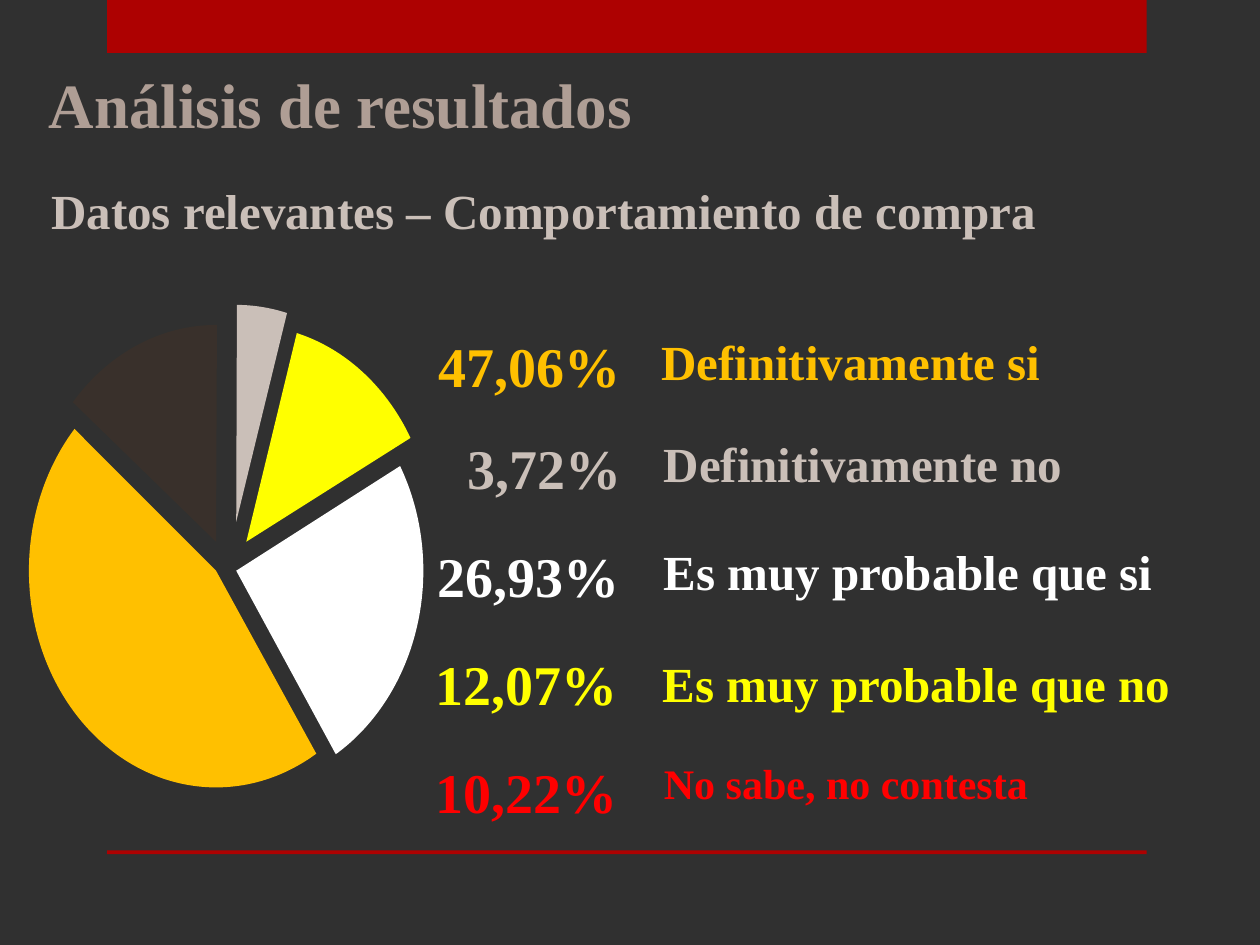
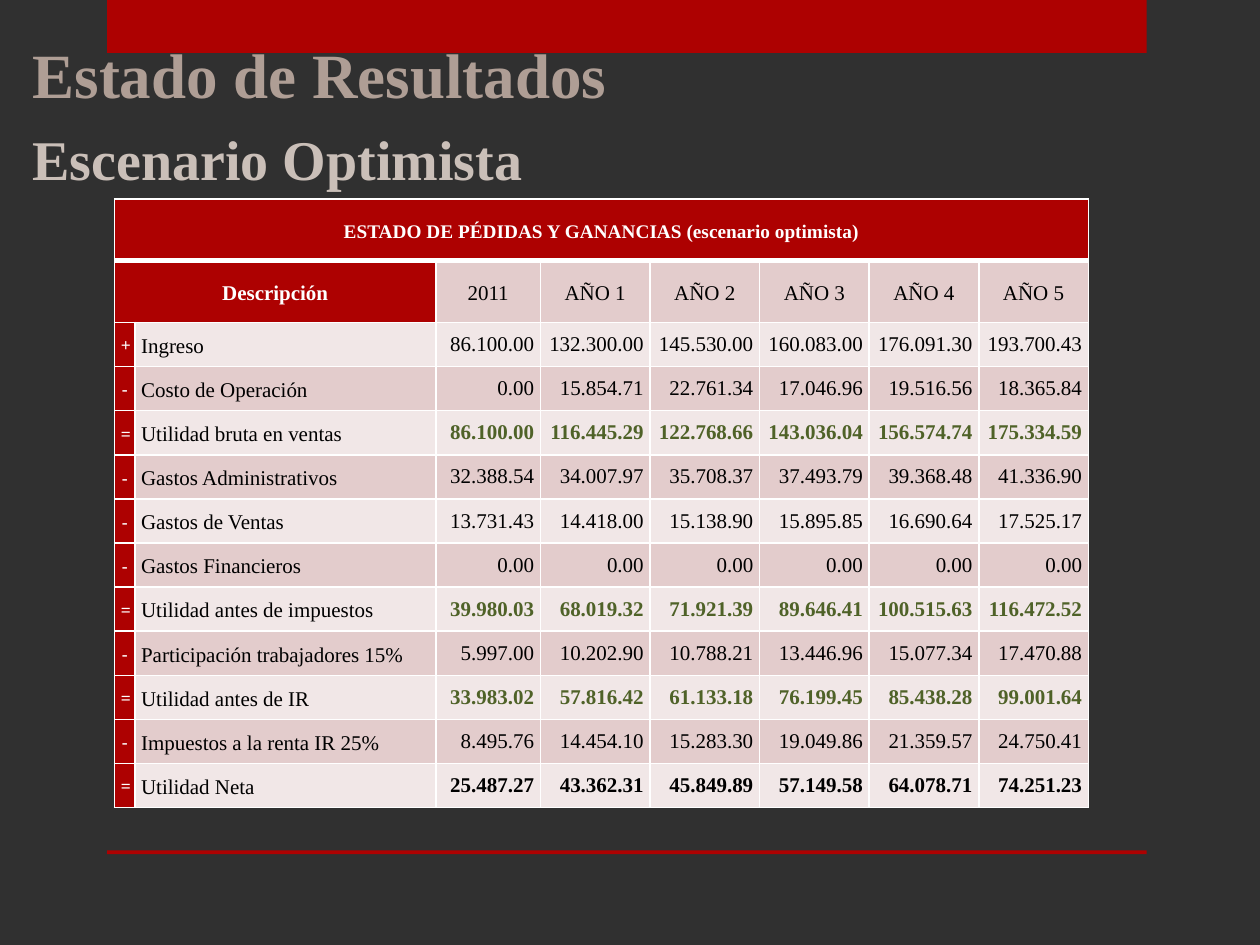
"""Builds two slides: purchase behaviour results and the optimistic income statement."""
from dataclasses import dataclass

from pptx import Presentation
from pptx.dml.color import RGBColor
from pptx.enum.shapes import MSO_SHAPE
from pptx.enum.text import MSO_ANCHOR, MSO_AUTO_SIZE, PP_ALIGN
from pptx.oxml.ns import qn
from pptx.util import Inches, Pt
from lxml import etree

RECT, PIE = MSO_SHAPE.RECTANGLE, MSO_SHAPE.PIE
LEFT, CENTER, RIGHT = PP_ALIGN.LEFT, PP_ALIGN.CENTER, PP_ALIGN.RIGHT
MIDDLE = MSO_ANCHOR.MIDDLE
GROW = MSO_AUTO_SIZE.SHAPE_TO_FIT_TEXT


@dataclass(frozen=True)
class Theme:
    font: str = "Times New Roman"
    back: str = "303030"
    red: str = "AD0101"
    title: str = "AF9E95"
    taupe: str = "CABFB8"
    brown: str = "39302B"
    orange: str = "FFC000"
    yellow: str = "FFFF00"
    bright_red: str = "FF0000"
    white: str = "FFFFFF"
    black: str = "000000"
    green: str = "4F6228"
    dark_row: str = "E3CCCC"
    light_row: str = "F1E7E7"
    title_size: int = 36
    large: int = 32
    medium: int = 28
    small: int = 24
    cell: int = 12
    cell_title: int = 11
    sign: int = 10


T = Theme()

ANSWERS = [
    ("47,06%", (3.38, 2.58, 1.72), "Definitivamente si", (5.15, 2.58, 3.57), T.orange, T.medium),
    ("3,72%", (3.61, 3.39, 1.47), "Definitivamente no", (5.17, 3.39, 3.72), T.taupe, T.medium),
    ("26,93%", (3.37, 4.25, 1.72), "Es muy probable que si", (5.17, 4.25, 4.61), T.white, T.medium),
    ("12,07%", (3.36, 5.11, 1.72), "Es muy probable que no", (5.16, 5.14, 4.77), T.yellow, T.medium),
    ("10,22%", (3.36, 5.96, 1.72), "No sabe, no contesta", (5.17, 5.96, 3.12), T.bright_red, T.small),
]
SLICES = [
    (0.23, 2.81, 61.28, 225.03, T.orange),
    (0.39, 2.81, 327.44, 61.52, T.white),
    (0.47, 2.58, 283.61, 327.7, T.yellow),
    (0.39, 2.42, 270.19, 283.69, T.taupe),
    (0.23, 2.58, 224.27, 270.24, T.brown),
]
YEARS = ["2011"] + [f"AÑO {n}" for n in range(1, 6)]
STATEMENT = [
    ("+", "Ingreso", "86.100.00 132.300.00 145.530.00 160.083.00 176.091.30 193.700.43"),
    ("-", "Costo de Operación", "0.00 15.854.71 22.761.34 17.046.96 19.516.56 18.365.84"),
    ("=", "Utilidad bruta en ventas",
     "86.100.00 116.445.29 122.768.66 143.036.04 156.574.74 175.334.59"),
    ("-", "Gastos Administrativos", "32.388.54 34.007.97 35.708.37 37.493.79 39.368.48 41.336.90"),
    ("-", "Gastos de Ventas", "13.731.43 14.418.00 15.138.90 15.895.85 16.690.64 17.525.17"),
    ("-", "Gastos Financieros", "0.00 0.00 0.00 0.00 0.00 0.00"),
    ("=", "Utilidad antes de impuestos",
     "39.980.03 68.019.32 71.921.39 89.646.41 100.515.63 116.472.52"),
    ("-", "Participación trabajadores 15%",
     "5.997.00 10.202.90 10.788.21 13.446.96 15.077.34 17.470.88"),
    ("=", "Utilidad antes de IR", "33.983.02 57.816.42 61.133.18 76.199.45 85.438.28 99.001.64"),
    ("-", "Impuestos a la renta IR 25%",
     "8.495.76 14.454.10 15.283.30 19.049.86 21.359.57 24.750.41"),
    ("=", "Utilidad Neta", "25.487.27 43.362.31 45.849.89 57.149.58 64.078.71 74.251.23"),
]


def write(tf, text, size=T.cell, color=T.black, bold=False, align=LEFT, spacing=None):
    p = tf.paragraphs[0]
    p.alignment = align
    if spacing:
        p.line_spacing = spacing
    r = p.add_run()
    r.text = text
    r.font.name, r.font.size, r.font.bold = T.font, Pt(size), bold
    r.font.color.rgb = RGBColor.from_string(color)


class Deck:
    def __init__(self, theme):
        self.theme = theme
        self.prs = Presentation()
        self.prs.slide_width, self.prs.slide_height = Inches(10), Inches(7.5)
        self.s = None

    def slide(self):
        self.s = self.prs.slides.add_slide(self.prs.slide_layouts[6])
        fill = self.s.background.fill
        fill.solid()
        fill.fore_color.rgb = RGBColor.from_string(self.theme.back)
        for top, height in ((0, 0.42), (6.75, 0.03)):
            self.shape(RECT, 0.85, top, 8.25, height, self.theme.red)

    def shape(self, kind, left, top, width, height, color):
        sp = self.s.shapes.add_shape(kind, Inches(left), Inches(top), Inches(width), Inches(height))
        sp.shadow.inherit = False
        sp.fill.solid()
        sp.fill.fore_color.rgb = RGBColor.from_string(color)
        sp.line.fill.background()
        return sp

    def slice(self, left, top, start, end, color):
        sp = self.shape(PIE, left, top, 2.97, 3.44, color)
        for i, angle in enumerate((start, end)):
            sp.adjustments[i] = angle * 0.6

    def text(self, text, left, top, width, size, color):
        height = 0.1 + size * 0.017
        tf = self.s.shapes.add_textbox(
            Inches(left), Inches(top), Inches(width), Inches(height)).text_frame
        tf.word_wrap = False
        tf.auto_size = GROW
        write(tf, text, size=size, color=color, bold=True)

    def table(self, left, top, widths, heights):
        frame = self.s.shapes.add_table(len(heights), len(widths), Inches(left), Inches(top),
                                        Inches(sum(widths)), Inches(sum(heights)))
        tbl = frame.table
        tbl.first_row = tbl.horz_banding = False
        for col, width in zip(tbl.columns, widths):
            col.width = Inches(width)
        for row, height in zip(tbl.rows, heights):
            row.height = Inches(height)
        return tbl

    def border(self, cell, side, width):
        ln = etree.SubElement(cell._tc.get_or_add_tcPr(), qn(f"a:ln{side}"), w=str(Pt(width)))
        fill = etree.SubElement(ln, qn("a:solidFill"))
        etree.SubElement(fill, qn("a:srgbClr"), val=self.theme.white)

    def cell(self, cell, fill, text="", top=1, bottom=1, **style):
        for side, width in (("L", 1), ("R", 1), ("T", top), ("B", bottom)):
            self.border(cell, side, width)
        cell.fill.solid()
        cell.fill.fore_color.rgb = RGBColor.from_string(fill)
        cell.vertical_anchor = MIDDLE
        cell.margin_left = cell.margin_right = Inches(0.05)
        cell.margin_top = cell.margin_bottom = 0
        if text:
            write(cell.text_frame, text, **style)


def behaviour_slide(deck):
    deck.slide()
    deck.text("Análisis de resultados", 0.29, 0.47, 5.56, T.title_size, T.title)
    deck.text("Datos relevantes – Comportamiento de compra", 0.31, 1.38, 9.03, T.medium, T.taupe)
    for pie_slice in SLICES:
        deck.slice(*pie_slice)
    for share, share_at, answer, answer_at, color, size in ANSWERS:
        deck.text(share, *share_at, T.large, color)
        deck.text(answer, *answer_at, size, color)


def statement_slide(deck):
    deck.slide()
    deck.text("Estado de Resultados", 0.16, 0.23, 5.48, T.title_size, T.title)
    deck.text("Escenario Optimista", 0.16, 0.94, 4.54, T.large, T.taupe)
    tbl = deck.table(0.91, 1.58, [0.16, 2.39, 0.83] + [0.87] * 5,
                     [0.49] * 2 + [0.35] * len(STATEMENT))
    tbl.cell(0, 0).merge(tbl.cell(0, 7))
    tbl.cell(1, 0).merge(tbl.cell(1, 1))
    head = dict(color=T.white, bold=True, align=CENTER, spacing=1.15)
    titles = ["ESTADO DE PÉDIDAS Y GANANCIAS (escenario optimista)"] + [""] * 7
    for c, text in enumerate(titles):
        deck.cell(tbl.cell(0, c), T.red, text, bottom=3, size=T.cell_title, **head)
    for c, text in enumerate(["Descripción", ""]):
        deck.cell(tbl.cell(1, c), T.red, text, top=3, **head)
    for c, year in enumerate(YEARS, 2):
        deck.cell(tbl.cell(1, c), T.dark_row, year, top=3, align=CENTER, spacing=1.15)
    for r, (sign, label, amounts) in enumerate(STATEMENT, 2):
        fill = T.dark_row if r % 2 else T.light_row
        total = sign == "="
        color = T.green if total and label != "Utilidad Neta" else T.black
        deck.cell(tbl.cell(r, 0), T.red, sign, size=T.sign, **head)
        deck.cell(tbl.cell(r, 1), fill, label, spacing=1.15)
        for c, amount in enumerate(amounts.split(), 2):
            deck.cell(tbl.cell(r, c), fill, amount, color=color, bold=total, align=RIGHT)


def main():
    deck = Deck(T)
    behaviour_slide(deck)
    statement_slide(deck)
    deck.prs.save("out.pptx")


if __name__ == "__main__":
    main()
